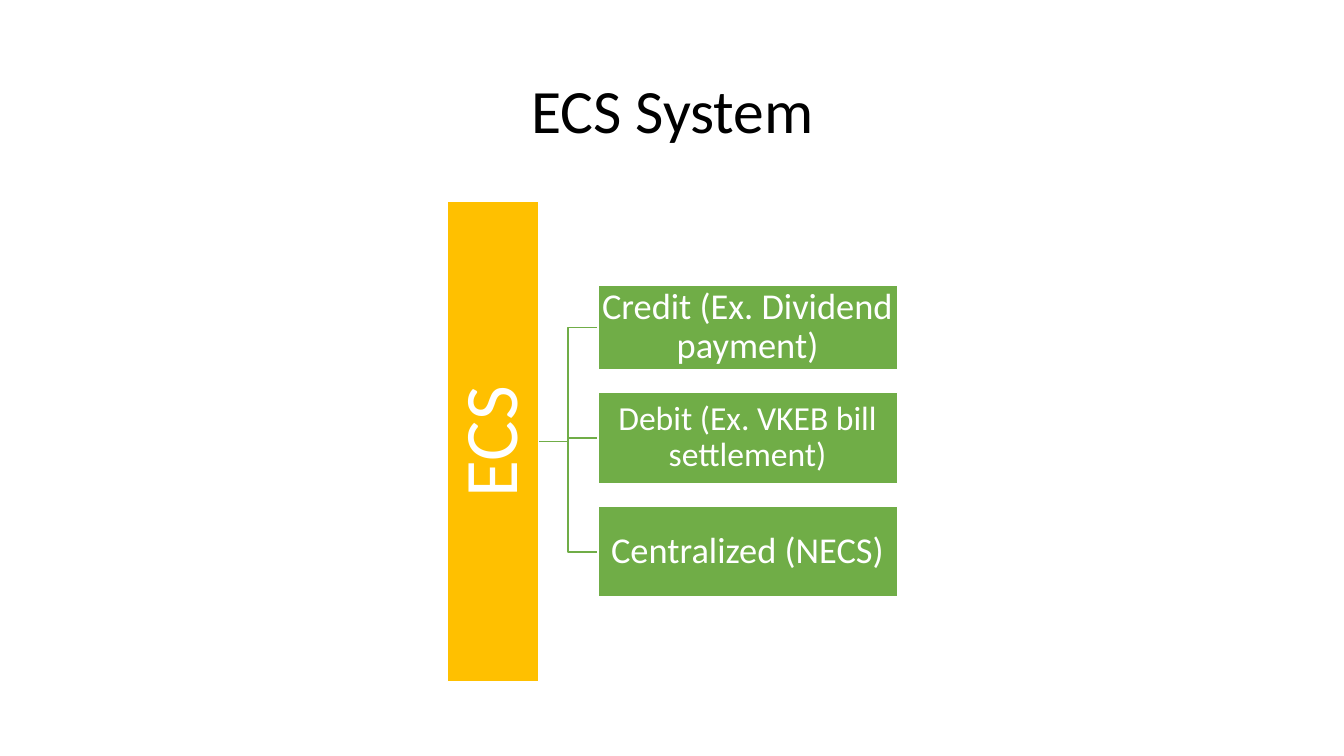
from pptx import Presentation
from pptx.dml.color import RGBColor
from pptx.enum.shapes import MSO_SHAPE
from pptx.enum.text import MSO_ANCHOR, PP_ALIGN
from pptx.util import Inches, Pt

RECTANGLE = MSO_SHAPE.RECTANGLE
MIDDLE = MSO_ANCHOR.MIDDLE
CENTER = PP_ALIGN.CENTER

FONT = "Calibri"
COLORS = {"title": "000000", "root": "FFC000", "branch": "70AD47", "white": "FFFFFF"}

# Branch text, text size, box height
BRANCHES = [
    ("Credit (Ex. Dividend payment)", 26, 0.83),
    ("Debit (Ex. VKEB bill settlement)", 24, 0.9),
    ("Centralized (NECS)", 26, 0.9),
]


def color(name):
    return RGBColor.from_string(COLORS[name])


def write(shape, text, size, color_name, inset):
    frame = shape.text_frame
    frame.word_wrap = True
    frame.vertical_anchor = MIDDLE
    frame.margin_left = frame.margin_right = Inches(inset)
    frame.margin_top = frame.margin_bottom = Inches(inset)
    para = frame.paragraphs[0]
    para.alignment = CENTER
    para.line_spacing = 0.9
    span = para.add_run()
    span.text = text
    span.font.name = FONT
    span.font.size = Pt(size)
    span.font.color.rgb = color(color_name)


def add_node(page, left, top, width, height, fill, text, size, inset):
    node = page.shapes.add_shape(
        RECTANGLE, Inches(left), Inches(top), Inches(width), Inches(height))
    node.shadow.inherit = False
    node.fill.solid()
    node.fill.fore_color.rgb = color(fill)
    node.line.color.rgb = color("white")
    node.line.width = Pt(1)
    write(node, text, size, "white", inset)
    return node


def add_elbow(page, left, start, right, end):
    middle = (left + right) / 2
    builder = page.shapes.build_freeform(Inches(left), Inches(start))
    corners = [(middle, start), (middle, end), (right, end)]
    builder.add_line_segments(
        [(Inches(x), Inches(y)) for x, y in corners], close=False)
    elbow = builder.convert_to_shape()
    elbow.shadow.inherit = False
    elbow.fill.background()
    elbow.line.color.rgb = color("branch")
    elbow.line.width = Pt(1)


def add_title(page, left, top, width, height):
    box = page.shapes.add_textbox(
        Inches(left), Inches(top), Inches(width), Inches(height))
    write(box, "ECS System", 44, "title", 0.1)


def add_hierarchy(page, left, top, width, height):
    bar_width, branch_width, gap = 0.9, 2.97, 0.23
    center = top + height / 2
    bar_right = left + bar_width
    branch_left = left + width - branch_width

    # Stack the branches around the vertical center
    stack = sum(item[2] for item in BRANCHES) + gap * (len(BRANCHES) - 1)
    branch_top = center - stack / 2
    rows = []
    for text, size, branch_height in BRANCHES:
        rows.append((text, size, branch_top, branch_height))
        branch_top += branch_height + gap

    # Links from the root, behind the boxes
    for text, size, row_top, row_height in reversed(rows):
        add_elbow(page, bar_right, center, branch_left, row_top + row_height / 2)

    # Root bar, turned to read upwards
    root = add_node(page, left + (bar_width - height) / 2, center - bar_width / 2,
                    height, bar_width, "root", "ECS", 54, 0.04)
    root.rotation = 270

    # Branch boxes
    for text, size, row_top, row_height in rows:
        add_node(page, branch_left, row_top, branch_width, row_height,
                 "branch", text, size, 0.02)


def main():
    deck = Presentation()
    deck.slide_width = Inches(13.33)
    deck.slide_height = Inches(7.5)
    page = deck.slides.add_slide(deck.slide_layouts[6])
    add_title(page, 0.92, 0.4, 11.5, 1.45)
    add_hierarchy(page, 4.44, 2, 4.46, 4.76)
    deck.save("out.pptx")


if __name__ == "__main__":
    main()
